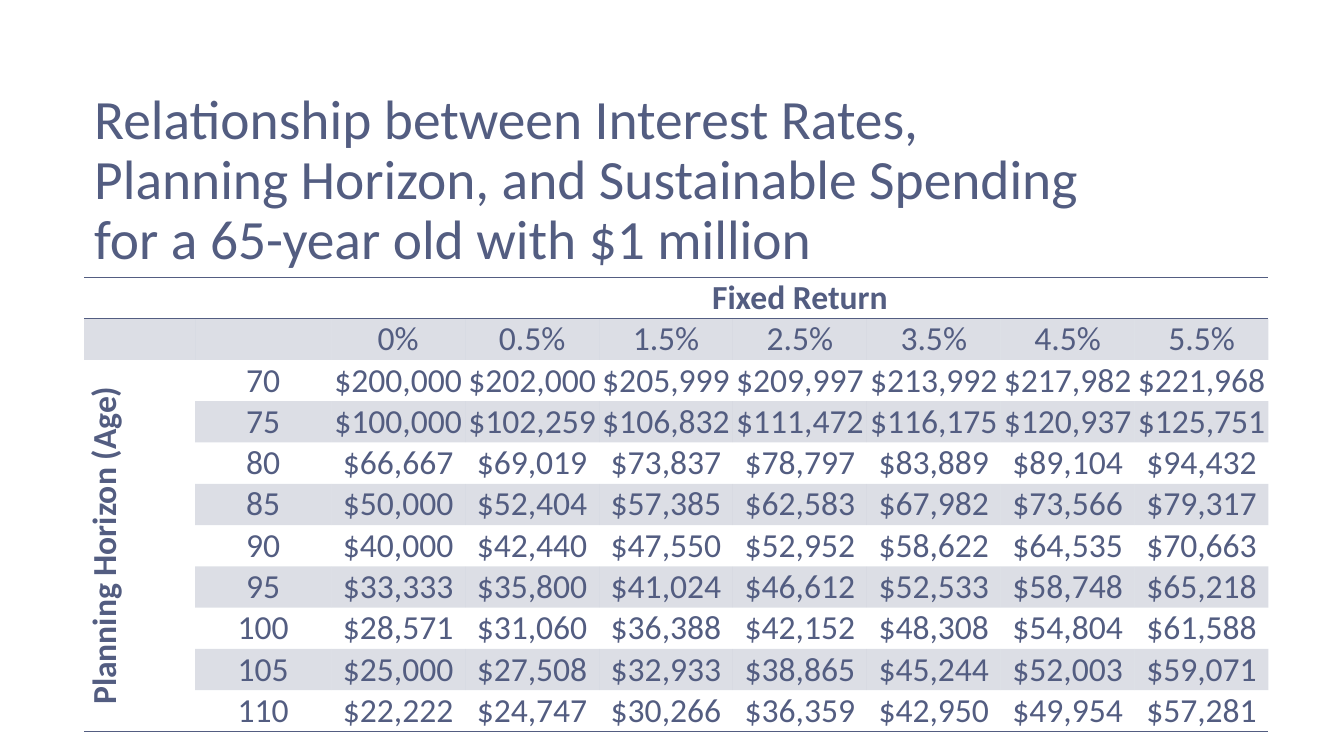
from lxml import etree
from pptx import Presentation
from pptx import util as u
from pptx.dml.color import RGBColor
from pptx.enum import text as t
from pptx.oxml.ns import qn

INK = "535D81"
PLAIN = "{2D5ABB26-0587-4C30-8999-92F81FD0307C}"  # table style without grid
TITLE = ("Relationship between Interest Rates,\v"
         "Planning Horizon, and Sustainable Spending\v"
         "for a 65-year old with $1 million")
RATES = ["0%", "0.5%", "1.5%", "2.5%", "3.5%", "4.5%", "5.5%"]
SPEND = {
    70: [200000, 202000, 205999, 209997, 213992, 217982, 221968],
    75: [100000, 102259, 106832, 111472, 116175, 120937, 125751],
    80: [66667, 69019, 73837, 78797, 83889, 89104, 94432],
    85: [50000, 52404, 57385, 62583, 67982, 73566, 79317],
    90: [40000, 42440, 47550, 52952, 58622, 64535, 70663],
    95: [33333, 35800, 41024, 46612, 52533, 58748, 65218],
    100: [28571, 31060, 36388, 42152, 48308, 54804, 61588],
    105: [25000, 27508, 32933, 38865, 45244, 52003, 59071],
    110: [22222, 24747, 30266, 36359, 42950, 49954, 57281],
}


def color(code):
    return RGBColor.from_string(code)


def write(frame, words, size=24, bold=False, align=t.PP_ALIGN.CENTER, space=1.0):
    frame.text = words
    para = frame.paragraphs[0]
    para.alignment = align
    para.line_spacing = space
    font = para.font
    font.size, font.bold, font.name = u.Pt(size), bold, "Calibri"
    font.color.rgb = color(INK)
    for run in para.runs:
        run.font.size, run.font.bold, run.font.name = u.Pt(size), bold, "Calibri"
        run.font.color.rgb = color(INK)


def rule(cell, side):
    """Draw a thin line on one side of a cell: lnT or lnB."""
    line = etree.SubElement(cell._tc.get_or_add_tcPr(), qn("a:" + side), w=str(u.Pt(1)))
    fill = etree.SubElement(line, qn("a:solidFill"))
    etree.SubElement(fill, qn("a:srgbClr"), val=INK)


def shade(cell, on):
    if not on:
        cell.fill.background()
        return
    cell.fill.solid()
    cell.fill.fore_color.rgb = color(INK)
    tint = cell._tc.tcPr.find(qn("a:solidFill")).find(qn("a:srgbClr"))
    etree.SubElement(tint, qn("a:alpha"), val="20000")


def heading(slide, x, y, w, h):
    title = slide.shapes.title
    title.left, title.top, title.width, title.height = map(u.Cm, (x, y, w, h))
    frame = title.text_frame
    frame.word_wrap = True
    frame.auto_size = t.MSO_AUTO_SIZE.NONE
    frame.vertical_anchor = t.MSO_ANCHOR.MIDDLE
    write(frame, TITLE, size=39.6, align=t.PP_ALIGN.LEFT, space=0.9)


def grid(slide, x, y, w, h):
    rows = [["", "", "Fixed Return"] + [""] * 6, ["", ""] + RATES]
    rows += [["", str(age)] + [f"${v:,}" for v in vals] for age, vals in SPEND.items()]
    rows[2][0] = "Planning Horizon (Age)"
    count, last = len(rows), len(rows) - 1

    table = slide.shapes.add_table(count, 9, *map(u.Cm, (x, y, w, h))).table
    table._tbl.tblPr.find(qn("a:tableStyleId")).text = PLAIN
    table.first_row = table.horz_banding = False

    # Column and row sizes
    side, age = 2.8, 3.43
    for i, col in enumerate(table.columns):
        col.width = u.Cm([side, age][i] if i < 2 else (w - side - age) / 7)
    for row in table.rows:
        row.height = u.Cm(h / count)

    # Cells: every second row is shaded, except under the side label
    for r, line in enumerate(rows):
        for c, words in enumerate(line):
            cell = table.cell(r, c)
            cell.margin_left = cell.margin_right = 0
            cell.margin_top = cell.margin_bottom = 0
            cell.vertical_anchor = t.MSO_ANCHOR.BOTTOM
            write(cell.text_frame, words, bold=r == 0 or c == 0)
            if r == 0:
                rule(cell, "lnT")
            if r == 0 or r == last or (r, c) == (2, 0):
                rule(cell, "lnB")
            shade(cell, r % 2 == 1 and (c > 0 or r == 1))

    # Merged labels
    table.cell(0, 2).merge(table.cell(0, 8))
    label = table.cell(2, 0)
    label.merge(table.cell(last, 0))
    label.vertical_anchor = t.MSO_ANCHOR.MIDDLE
    label._tc.tcPr.set("vert", "vert270")


def main():
    deck = Presentation()
    deck.slide_width, deck.slide_height = u.Cm(33.87), u.Cm(19.05)
    slide = deck.slides.add_slide(deck.slide_layouts[5])
    heading(slide, 2.12, 2.74, 29.21, 3.68)
    grid(slide, 2.12, 6.99, 29.85, 11.45)
    deck.save("out.pptx")


if __name__ == "__main__":
    main()
